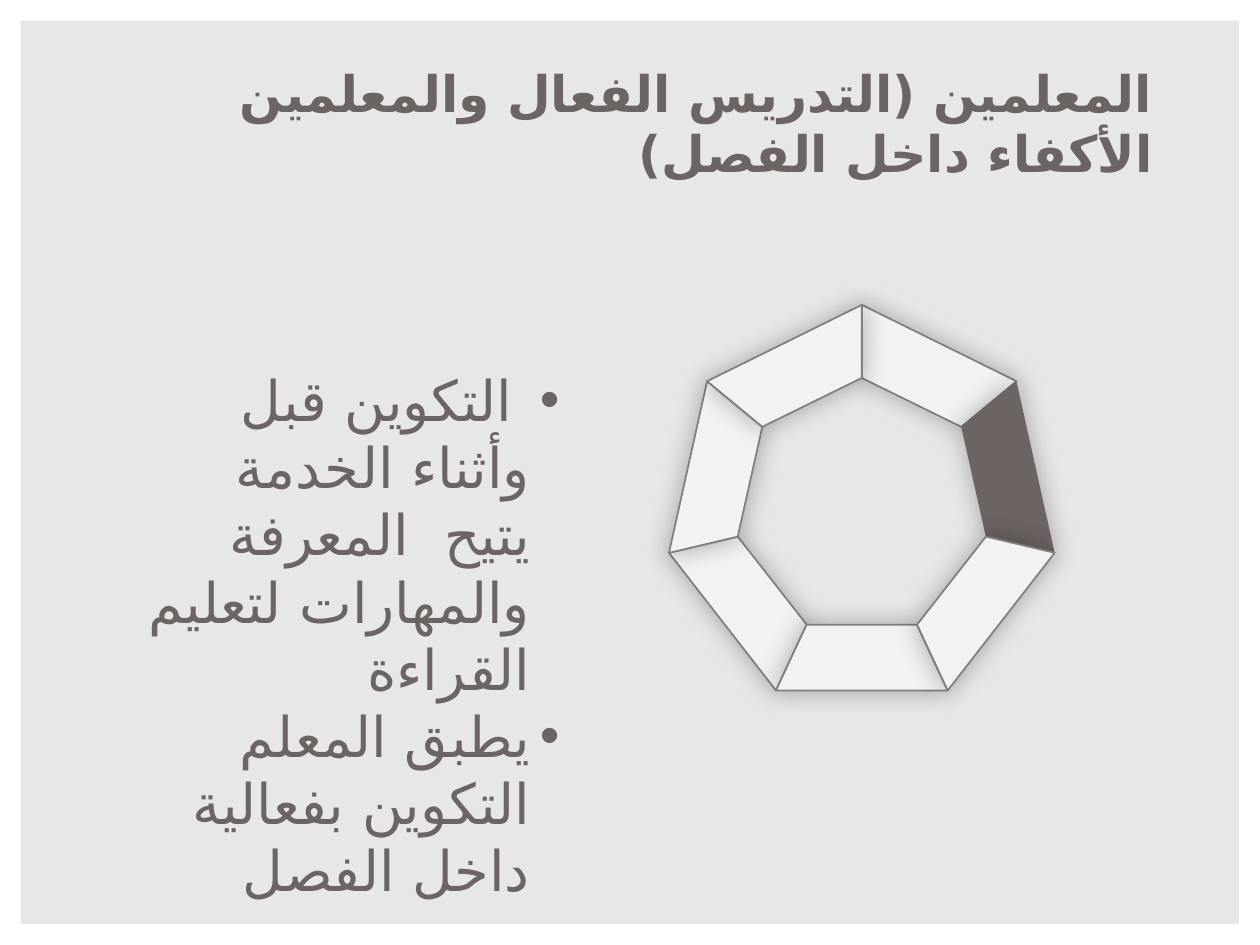
from dataclasses import dataclass
from math import cos, pi, sin

from lxml import etree
from pptx import Presentation
from pptx.dml.color import RGBColor
from pptx.enum.shapes import MSO_SHAPE
from pptx.enum.text import MSO_ANCHOR, MSO_AUTO_SIZE, PP_ALIGN
from pptx.oxml.ns import qn
from pptx.util import Emu, Inches, Pt

FRAME = MSO_SHAPE.FRAME
TOP, BOTTOM = MSO_ANCHOR.TOP, MSO_ANCHOR.BOTTOM
RIGHT = PP_ALIGN.RIGHT
NO_FIT = MSO_AUTO_SIZE.NONE


@dataclass(frozen=True)
class Theme:
    background: str = "E7E7E5"
    frame: str = "FFFFFF"
    accent: str = "6C6463"
    segment: str = "F2F2F2"
    outline: str = "7F7F7F"
    shadow: str = "000000"
    font: str = "Cabin"
    arabic_font: str = "DejaVu Sans"  # Cabin has no Arabic letters
    title_size: float = 28.8
    body_size: float = 32
    line_pitch: float = 1.2


@dataclass(frozen=True)
class Box:
    """Shares of the slide's width and height."""
    left: float
    top: float
    width: float
    height: float


@dataclass(frozen=True)
class Heptagon:
    """Centre and radii in inches, with one corner pointing up."""
    x: float
    y: float
    radius_x: float
    radius_y: float

    def corner(self, number: int) -> tuple[int, int]:
        angle = 2 * pi * number / SIDES
        return (Inches(self.x + self.radius_x * sin(angle)),
                Inches(self.y - self.radius_y * cos(angle)))


THEME = Theme()
WIDTH, HEIGHT = Inches(10), Inches(7.5)
TITLE_BOX = Box(0.075, 0.5 / 7.5, 0.85, 1 / 7.5)
BODY_BOX = Box(0.095, 2.9 / 7.5, 0.356, 1.59 / 7.5)
BULLET_INDENT = Inches(0.23)

SIDES = 7
OUTER = Heptagon(6.84, 4.03, 1.57, 1.61)
INNER = Heptagon(6.84, 4.03, 1.01, 1.03)
STACKING = (0, 4, 3, 5, 6, 1, 2)  # clockwise side numbers, back to front
HIGHLIGHTED = 1

TITLE = "المعلمين (التدريس الفعال والمعلمين الأكفاء داخل الفصل)"
POINTS = (
    " التكوين قبل وأثناء الخدمة  يتيح  المعرفة والمهارات لتعليم القراءة",
    "يطبق المعلم التكوين بفعالية داخل الفصل",
)


def rgb(value: str) -> RGBColor:
    return RGBColor.from_string(value)


def place(shape, box: Box) -> None:
    shape.left, shape.width = Emu(int(box.left * WIDTH)), Emu(int(box.width * WIDTH))
    shape.top, shape.height = Emu(int(box.top * HEIGHT)), Emu(int(box.height * HEIGHT))


def prepare_text(shape, box: Box, anchor, margin_x: float, margin_y: float):
    place(shape, box)
    frame = shape.text_frame
    frame.word_wrap, frame.auto_size = True, NO_FIT
    frame.vertical_anchor = anchor
    frame.margin_left = frame.margin_right = Inches(margin_x)
    frame.margin_top = frame.margin_bottom = Inches(margin_y)
    return frame


def write_arabic(paragraph, text: str, size: float, bold: bool) -> None:
    paragraph.alignment = RIGHT
    paragraph.line_spacing = Pt(size * THEME.line_pitch)
    paragraph.space_before = Pt(0)
    paragraph._p.get_or_add_pPr().set("rtl", "1")
    run = paragraph.add_run()
    run.text = text
    run.font.size, run.font.bold = Pt(size), bold
    run.font.color.rgb = rgb(THEME.accent)
    run.font.name = THEME.font
    etree.SubElement(run._r.get_or_add_rPr(), qn("a:cs"), typeface=THEME.arabic_font)


def add_bullet(paragraph) -> None:
    properties = paragraph._p.get_or_add_pPr()
    properties.set("marL", str(BULLET_INDENT))
    properties.set("indent", str(-BULLET_INDENT))
    colour = etree.SubElement(properties, qn("a:buClr"))
    etree.SubElement(colour, qn("a:srgbClr"), val=THEME.accent)
    etree.SubElement(properties, qn("a:buFont"), typeface="Arial")
    etree.SubElement(properties, qn("a:buChar"), char="•")


def add_soft_shadow(shape) -> None:
    effects = etree.SubElement(shape._element.spPr, qn("a:effectLst"))
    shadow = etree.SubElement(effects, qn("a:outerShdw"), blurRad=str(Pt(15)),
                              dist="0", dir="0", algn="ctr", rotWithShape="0")
    colour = etree.SubElement(shadow, qn("a:srgbClr"), val=THEME.shadow)
    etree.SubElement(colour, qn("a:alpha"), val="30000")


def add_segment(ring, side: int) -> None:
    start, *rest = (OUTER.corner(side), OUTER.corner(side + 1),
                    INNER.corner(side + 1), INNER.corner(side))
    builder = ring.shapes.build_freeform(*start)
    builder.add_line_segments(rest, close=True)
    segment = builder.convert_to_shape()
    segment.fill.solid()
    if side == HIGHLIGHTED:
        segment.fill.fore_color.rgb = rgb(THEME.accent)
        segment.line.fill.background()
    else:
        segment.fill.fore_color.rgb = rgb(THEME.segment)
        segment.line.color.rgb = rgb(THEME.outline)
        segment.line.width = Pt(1)
    add_soft_shadow(segment)


def main() -> None:
    deck = Presentation()
    deck.slide_width, deck.slide_height = WIDTH, HEIGHT
    slide = deck.slides.add_slide(deck.slide_layouts[1])
    slide.background.fill.solid()
    slide.background.fill.fore_color.rgb = rgb(THEME.background)
    title, body = slide.shapes.title, slide.placeholders[1]

    # White frame around the slide
    border = slide.shapes.add_shape(FRAME, 0, 0, WIDTH, HEIGHT)
    border.adjustments[0] = 0.022
    border.shadow.inherit = False
    border.fill.solid()
    border.fill.fore_color.rgb = rgb(THEME.frame)
    border.line.fill.background()

    # Bulleted points, stacked above the frame
    slide.shapes._spTree.append(body._element)
    points = prepare_text(body, BODY_BOX, TOP, 0.07, 0)
    for number, text in enumerate(POINTS):
        point = points.add_paragraph() if number else points.paragraphs[0]
        write_arabic(point, text, THEME.body_size, False)
        add_bullet(point)

    # Seven-sided ring
    ring = slide.shapes.add_group_shape()
    for side in STACKING:
        add_segment(ring, side)

    # Title, on top
    slide.shapes._spTree.append(title._element)
    heading = prepare_text(title, TITLE_BOX, BOTTOM, 0.1, 0.05)
    write_arabic(heading.paragraphs[0], TITLE, THEME.title_size, True)

    deck.save("out.pptx")


if __name__ == "__main__":
    main()
